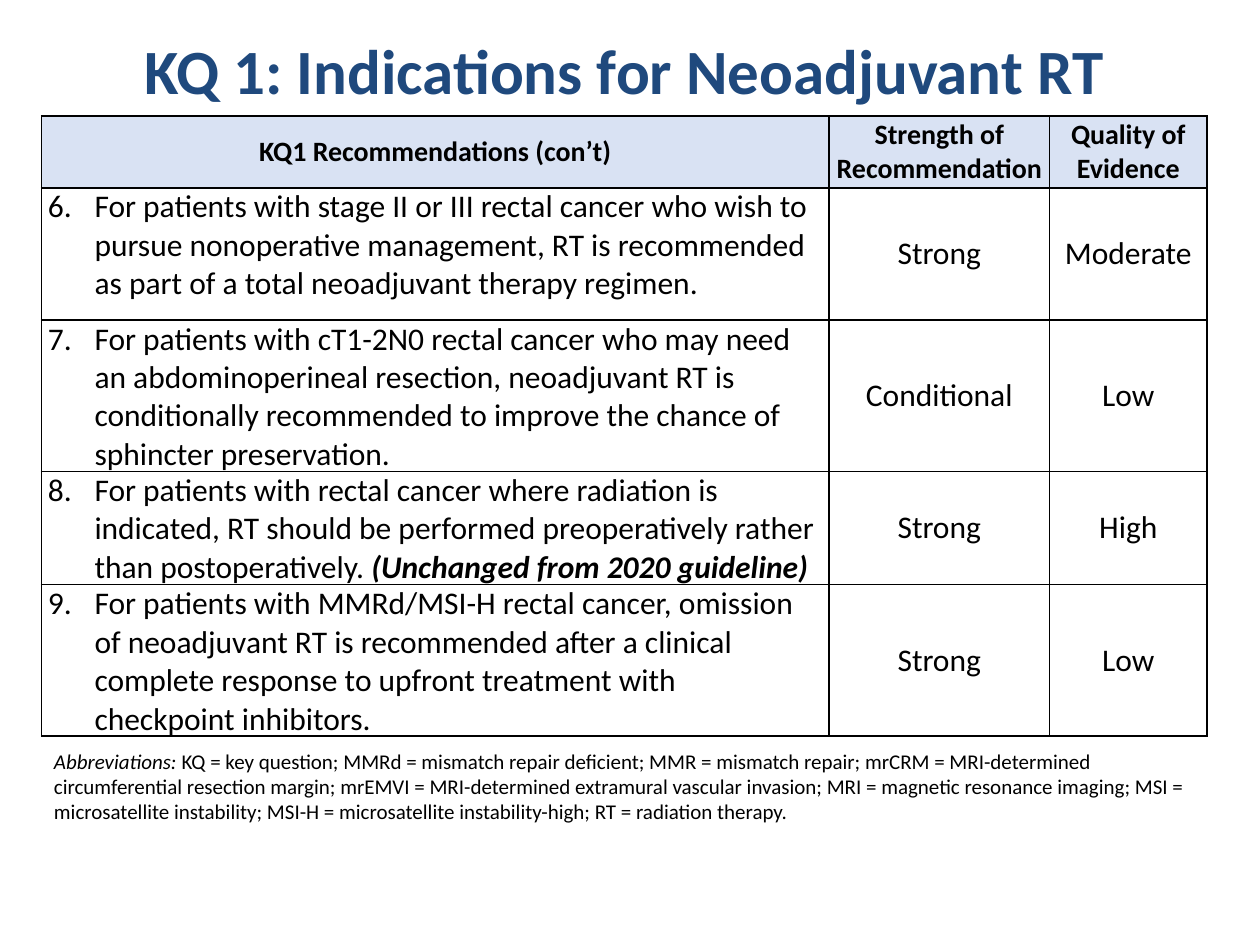
from lxml import etree
from pptx import Presentation
from pptx import util as u
from pptx.dml.color import RGBColor
from pptx.enum import text
from pptx.oxml.ns import qn

HUE = {"title": "1F497D", "ink": "000000", "head": "D9E2F3"}
FONT = "Calibri"
TITLE = "KQ 1: Indications for Neoadjuvant RT"
HEAD = ("KQ1 Recommendations (con’t)", "Strength of Recommendation", "Quality of Evidence")
# height, number, advice, closing note, strength, quality
ROWS = [
    (1.05, 6, "For patients with stage II or III rectal cancer who wish to pursue nonoperative "
     "management, RT is recommended as part of a total neoadjuvant therapy regimen.",
     "", "Strong", "Moderate"),
    (1.2, 7, "For patients with cT1-2N0 rectal cancer who may need an abdominoperineal resection, "
     "neoadjuvant RT is conditionally recommended to improve the chance of sphincter preservation.",
     "", "Conditional", "Low"),
    (0.9, 8, "For patients with rectal cancer where radiation is indicated, RT should be performed "
     "preoperatively rather than postoperatively. ",
     "(Unchanged from 2020 guideline)", "Strong", "High"),
    (1.2, 9, "For patients with MMRd/MSI-H rectal cancer, omission of neoadjuvant RT is recommended "
     "after a clinical complete response to upfront treatment with checkpoint inhibitors.",
     "", "Strong", "Low"),
]
ABBR = ("KQ = key question; MMRd = mismatch repair deficient; MMR = mismatch repair; "
        "mrCRM = MRI-determined circumferential resection margin; mrEMVI = MRI-determined "
        "extramural vascular invasion; MRI = magnetic resonance imaging; MSI = microsatellite "
        "instability; MSI-H = microsatellite instability-high; RT = radiation therapy.")

COLS = (6.25, 1.75, 1.25)
LEFT, TOP, HEAD_H = 0.33, 0.92, 0.57
WIDE = sum(COLS)
HANG = 0.37
MID = text.PP_ALIGN.CENTER


def add_run(para, words, size, hue="ink", bold=False, slant=False):
    run = para.add_run()
    run.text = words
    font = run.font
    font.name, font.size = FONT, u.Pt(size)
    font.bold, font.italic = bold, slant
    font.color.rgb = RGBColor.from_string(HUE[hue])


def indent(para, left, first=0):
    props = para._p.get_or_add_pPr()
    props.set("marL", str(u.Inches(left)))
    props.set("indent", str(u.Inches(first)))


def add_box(slide, left, top, width, height):
    frame = slide.shapes.add_textbox(*map(u.Inches, (left, top, width, height))).text_frame
    frame.word_wrap = True
    return frame


def rule(cell):
    """Draw a thin line on all four sides of a cell."""
    props = cell._tc.get_or_add_tcPr()
    for side in ("a:lnL", "a:lnR", "a:lnT", "a:lnB"):
        line = etree.SubElement(props, qn(side), w=str(u.Pt(1)))
        fill = etree.SubElement(line, qn("a:solidFill"))
        etree.SubElement(fill, qn("a:srgbClr"), val=HUE["ink"])


def add_band(slide, top, height, fill=None):
    """Add a one-row table and return its cells."""
    table = slide.shapes.add_table(
        1, len(COLS), *map(u.Inches, (LEFT, top, WIDE, height))).table
    table.first_row = table.horz_banding = False
    for col, width in zip(table.columns, COLS):
        col.width = u.Inches(width)
    cells = list(table.rows[0].cells)
    for cell in cells:
        cell.margin_left = cell.margin_right = u.Inches(0.05)
        cell.margin_top = cell.margin_bottom = 0
        cell.vertical_anchor = text.MSO_ANCHOR.MIDDLE
        rule(cell)
        if fill:
            cell.fill.solid()
            cell.fill.fore_color.rgb = RGBColor.from_string(HUE[fill])
        else:
            cell.fill.background()
    return cells


def fill_mid(cell, words, size, bold=False):
    para = cell.text_frame.paragraphs[0]
    para.alignment = MID
    add_run(para, words, size, bold=bold)


def main():
    deck = Presentation()
    deck.slide_width, deck.slide_height = u.Inches(10), u.Inches(7.5)
    slide = deck.slides.add_slide(deck.slide_layouts[6])

    frame = add_box(slide, LEFT, 0.17, WIDE, 0.58)
    frame.margin_top = u.Inches(0.08)
    para = frame.paragraphs[0]
    para.alignment = MID
    add_run(para, TITLE, 36, "title", bold=True)

    for cell, words in zip(add_band(slide, TOP, HEAD_H, "head"), HEAD):
        fill_mid(cell, words, 16, bold=True)

    top = TOP + HEAD_H
    for height, num, advice, note, *grades in ROWS:
        first, *rest = add_band(slide, top, height)
        first.vertical_anchor = text.MSO_ANCHOR.TOP
        para = first.text_frame.paragraphs[0]
        indent(para, HANG, -HANG)
        para.space_after = u.Pt(6)
        add_run(para, f"{num}.\t{advice}", 18)
        if note:
            add_run(para, note, 18, bold=True, slant=True)
        for cell, grade in zip(rest, grades):
            fill_mid(cell, grade, 18)
        top += height

    para = add_box(slide, 0.27, 5.89, 9.31, 0.71).paragraphs[0]
    indent(para, 0.06)
    add_run(para, "Abbreviations:", 12, slant=True)
    add_run(para, " " + ABBR, 12)

    deck.save("out.pptx")


if __name__ == "__main__":
    main()
